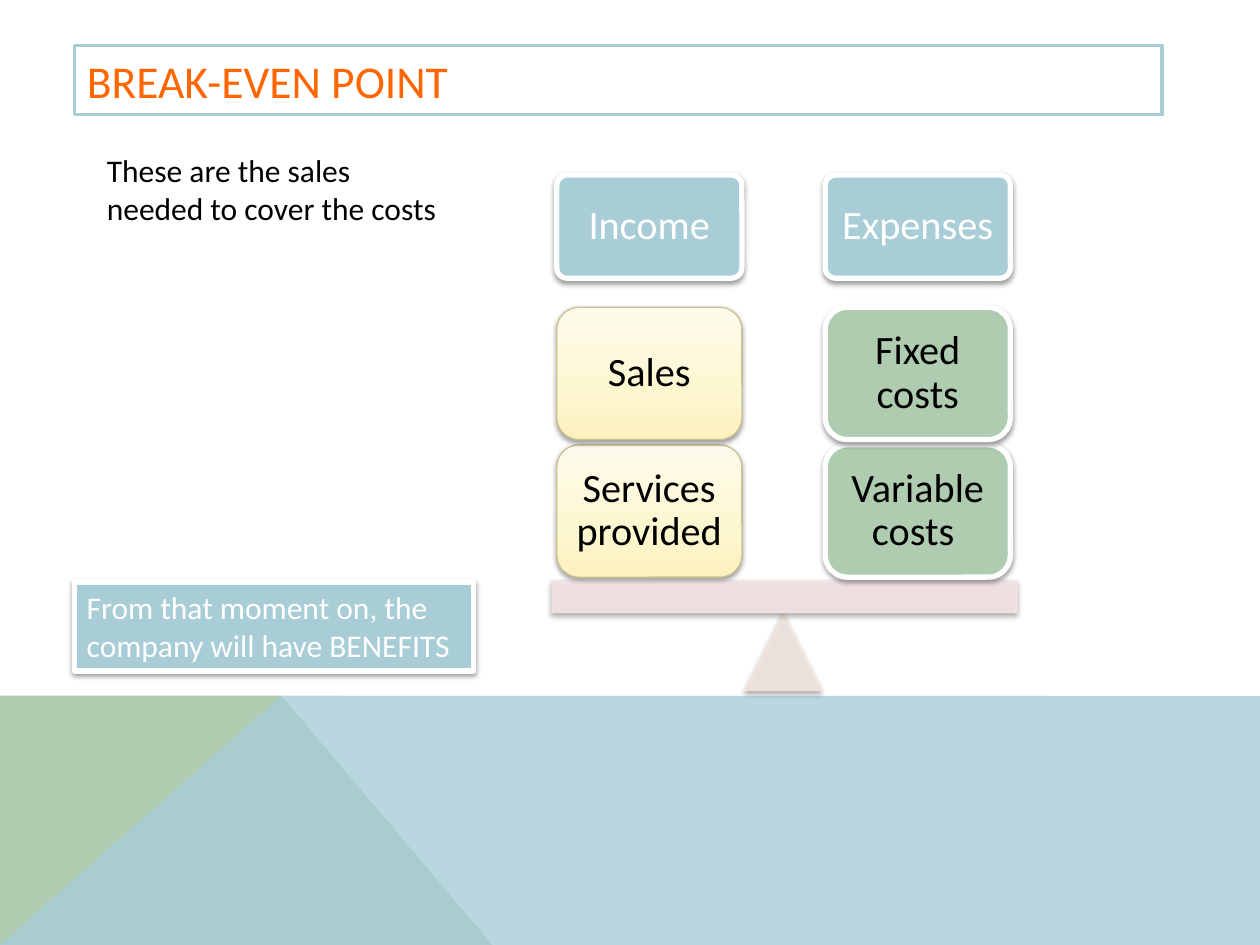
"""Builds the break-even point slide with its balance of income and expenses."""
from lxml import etree
from pptx import Presentation
from pptx.dml.color import RGBColor
from pptx.enum import shapes, text
from pptx.oxml import ns
from pptx.util import Pt

COLORS = {
    "blue": "A8CDD7", "green": "B0CCB0", "white": "FFFFFF", "black": "000000",
    "orange": "FF6600", "beam": "F5E5E5", "pivot": "F3E6E1", "khaki": "CAC091",
}
CREAM = ((0, "FCF0BE"), (35, "FDF7D0"), (100, "FEFAEC"))
FONT = "Calibri"
KIND = shapes.MSO_SHAPE
ALIGN = text.PP_ALIGN
ANCHOR = text.MSO_ANCHOR


def color(name):
    return RGBColor.from_string(COLORS[name])


def add_node(parent, tag, **attributes):
    return etree.SubElement(parent, ns.qn(tag), {key: str(value) for key, value in attributes.items()})


def set_alpha(box, percent):
    for node in box._element.spPr.iter(ns.qn("a:srgbClr")):
        add_node(node, "a:alpha", val=percent * 1000)


def set_shadow(box, alpha):
    box.shadow.inherit = False
    effects = box._element.spPr.find(ns.qn("a:effectLst"))
    shadow = add_node(effects, "a:outerShdw", blurRad=Pt(3.1), dist=Pt(1.6), dir=5400000, rotWithShape=0)
    tint = add_node(shadow, "a:srgbClr", val=COLORS["black"])
    add_node(tint, "a:alpha", val=alpha * 1000)


def set_gradient(box, stops):
    box.fill.gradient()
    box.fill.gradient_angle = 90
    holder = box._element.spPr.find(".//" + ns.qn("a:gsLst"))
    for old in list(holder):
        holder.remove(old)
    for position, value in stops:
        stop = add_node(holder, "a:gs", pos=position * 1000)
        add_node(stop, "a:srgbClr", val=value)


def write(box, words, size=18, ink="black", align=ALIGN.LEFT, anchor=ANCHOR.TOP, spacing=1.0, inset=3.6):
    frame = box.text_frame
    frame.word_wrap = True
    frame.auto_size = text.MSO_AUTO_SIZE.NONE
    frame.vertical_anchor = anchor
    frame.margin_left = frame.margin_right = Pt(7.2)
    frame.margin_top = frame.margin_bottom = Pt(inset)
    para = frame.paragraphs[0]
    para.alignment = align
    para.line_spacing = spacing
    span = para.add_run()
    span.text = words
    span.font.name = FONT
    span.font.size = Pt(size)
    span.font.color.rgb = color(ink)


def paint(box, fill, line, width):
    if fill == "cream":
        set_gradient(box, CREAM)
    else:
        box.fill.solid()
        box.fill.fore_color.rgb = color(fill)
    box.line.color.rgb = color(line)
    box.line.width = Pt(width)


def add_box(page, kind, place, fill, line="white", width=3, shadow=38):
    box = page.shapes.add_shape(kind, *map(Pt, place))
    paint(box, fill, line, width)
    set_shadow(box, shadow)
    return box


def add_card(page, words, place, fill, ink="black", corner=0.167, **outline):
    card = add_box(page, KIND.ROUNDED_RECTANGLE, place, fill, **outline)
    card.adjustments[0] = corner
    write(card, words, size=23, ink=ink, align=ALIGN.CENTER, anchor=ANCHOR.MIDDLE, spacing=0.9, inset=7.2)


def add_ground(page, points, fill, alpha=100):
    corners = [(Pt(x), Pt(y)) for x, y in points]
    builder = page.shapes.build_freeform(*corners[0])
    builder.add_line_segments(corners[1:], close=True)
    ground = builder.convert_to_shape()
    ground.shadow.inherit = False
    ground.fill.solid()
    ground.fill.fore_color.rgb = color(fill)
    ground.line.fill.background()
    if alpha < 100:
        set_alpha(ground, alpha)


def add_title(page, words):
    title = page.shapes.title
    title.left, title.top, title.width, title.height = map(Pt, (42.5, 26, 621.4, 39.6))
    paint(title, "white", "blue", 2)
    write(title, words, size=26, ink="orange", anchor=ANCHOR.MIDDLE)


def add_balance(page):
    for kind, place, fill in (
        (KIND.ISOSCELES_TRIANGLE, (425.5, 350.6, 43.9, 43.9), "pivot"),
        (KIND.RECTANGLE, (315.4, 331.9, 265.7, 18.2), "beam"),
    ):
        part = add_box(page, kind, place, fill, line=fill, width=0.75, shadow=35)
        for paint_node in part._element.spPr.iter(ns.qn("a:solidFill")):
            add_node(paint_node[0], "a:alpha", val=90000)

    left, step, width = 318.2, 153.4, 105.8
    columns = (
        ("Income", ("Sales", "Services provided"), "cream", {"line": "khaki", "width": 0.75}),
        ("Expenses", ("Fixed costs", "Variable costs "), "green", {}),
    )
    for column, (heading, items, fill, outline) in enumerate(columns):
        x = left + column * step
        add_card(page, heading, (x, 100, width, 59), "blue", ink="white", corner=0.1)
        for row in reversed(range(len(items))):
            add_card(page, items[row], (x, 175.6 + row * 78.6, width, 75.6), fill, **outline)


def main():
    deck = Presentation()
    deck.slide_width, deck.slide_height = Pt(720), Pt(540)
    page = deck.slides.add_slide(deck.slide_layouts[5])
    add_ground(page, ((0, 540), (0, 397.6), (160.8, 397.6), (281.3, 540)), "green")
    add_ground(page, ((0, 540), (160.8, 397.6), (720, 397.8), (720, 540)), "blue", alpha=80)
    add_title(page, "BREAK-EVEN POINT")
    add_balance(page)
    outcome = add_box(page, KIND.RECTANGLE, (42.5, 332.6, 228.2, 50.9), "blue")
    write(outcome, "From that moment on, the company will have BENEFITS", ink="white")
    definition = page.shapes.add_textbox(*map(Pt, (54, 82.8, 203.8, 50.9)))
    write(definition, "These are the sales needed to cover the costs")
    deck.save("out.pptx")


if __name__ == "__main__":
    main()
